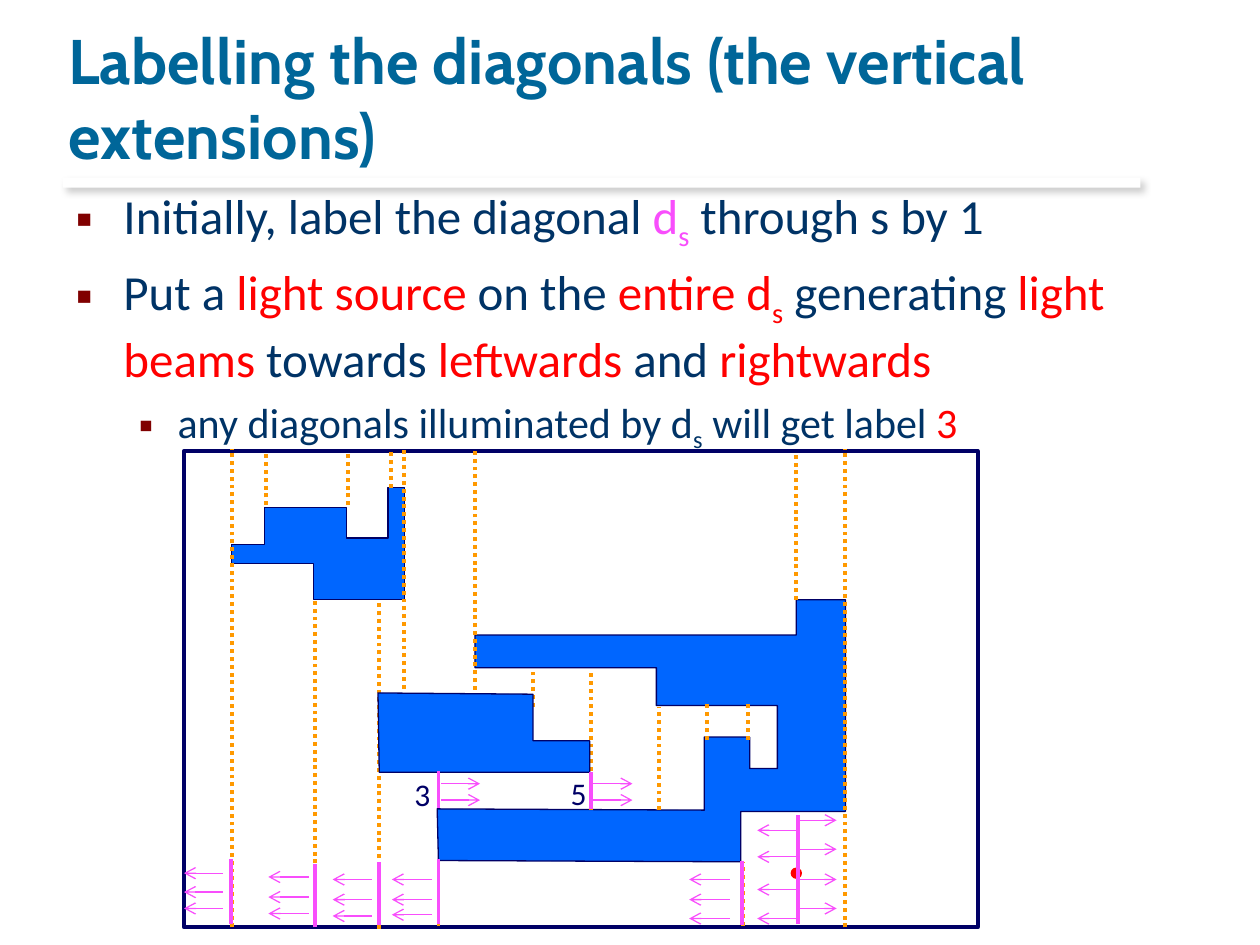
"""Build the slide on labelling the diagonals by light beams."""
import lxml.etree
import pptx
import pptx.dml.color
import pptx.enum.dml
import pptx.enum.shapes
import pptx.enum.text
import pptx.oxml
import pptx.oxml.ns
import pptx.util

Inches, Pt = pptx.util.Inches, pptx.util.Pt
SHAPE = pptx.enum.shapes.MSO_SHAPE
NAVY, BLUE, ORANGE, PINK = "000066", "0066FF", "FF9900", "F84EFC"
RED, INK, TEAL, MAROON = "FF0000", "003366", "006699", "800000"

# Each run is (text, colour, subscript)
BULLETS = [
    (0, 28, [("Initially, label the diagonal ", INK, False), ("d", PINK, False),
             ("s", PINK, True), (" through s by 1", INK, False)]),
    (0, 28, [("Put a ", INK, False), ("light source ", RED, False),
             ("on the ", INK, False), ("entire d", RED, False), ("s", RED, True),
             (" generating ", INK, False), ("light beams", RED, False),
             (" towards ", INK, False), ("leftwards", RED, False),
             (" and ", INK, False), ("rightwards", RED, False)]),
    (1, 24, [("any diagonals illuminated by d", INK, False), ("s", INK, True),
             (" will get label ", INK, False), ("3", RED, False)]),
]
UPPER_LEFT = [(1.84, 4.32), (1.84, 4.47), (2.49, 4.47), (2.49, 4.76), (3.21, 4.76),
              (3.21, 3.87), (3.08, 3.87), (3.08, 4.27), (2.75, 4.27), (2.75, 4.03),
              (2.1, 4.03), (2.1, 4.32)]
RIGHT = [(3.77, 5.04), (3.77, 5.3), (5.21, 5.3), (5.21, 5.6), (6.17, 5.6), (6.17, 6.1),
         (5.95, 6.1), (5.95, 5.85), (5.59, 5.85), (5.59, 6.43), (3.47, 6.42),
         (3.48, 6.83), (5.88, 6.84), (5.88, 6.44), (6.71, 6.44), (6.71, 4.76),
         (6.32, 4.76), (6.32, 5.04)]
MIDDLE = [(3, 5.5), (4.23, 5.51), (4.23, 5.88), (4.68, 5.88), (4.68, 6.13), (3.01, 6.13)]

# Vertical lines are (x, bottom, top)
EXTENSIONS = [(3.77, 5.6, 3.58), (3.21, 5.59, 3.56), (6.71, 7.36, 3.56),
              (1.84, 7.36, 3.56), (3.01, 7.37, 4.76), (2.5, 7.35, 4.74),
              (3.48, 7.35, 6.83), (5.9, 7.35, 6.84), (4.69, 6.43, 5.33),
              (5.23, 6.43, 5.61), (4.23, 5.61, 5.33), (5.61, 5.87, 5.59),
              (5.94, 5.87, 5.59), (6.32, 4.76, 3.58), (2.76, 4.01, 3.6),
              (2.11, 4.01, 3.6), (3.1, 3.87, 3.58)]
LIT_DIAGONALS = [(6.33, 7.33, 6.47), (3.48, 6.41, 6.12), (4.69, 6.42, 6.13),
                 (5.89, 7.34, 6.83), (3.48, 7.33, 6.82), (3.01, 7.34, 6.84),
                 (2.5, 7.36, 6.86), (1.83, 7.33, 6.82)]
# Beams are (start x, end x, heights)
BEAMS = [(6.33, 6.01, (6.59, 6.8, 7.06, 7.29)), (6.34, 6.64, (6.51, 6.74, 6.98, 7.21)),
         (5.79, 5.47, (6.98, 7.14, 7.29)), (3.43, 3.11, (6.98, 7.14, 7.26)),
         (2.95, 2.64, (6.98, 7.14, 7.27)), (2.45, 2.13, (6.96, 7.12, 7.25)),
         (1.77, 1.46, (6.93, 7.08, 7.21)), (3.5, 3.81, (6.22, 6.35)),
         (4.71, 5.02, (6.22, 6.35))]


def rgb(code):
    """Turn a hex string into a colour."""
    return pptx.dml.color.RGBColor.from_string(code)


def add_xml(parent, tag, **attributes):
    """Append a drawing element to its parent."""
    return lxml.etree.SubElement(parent, pptx.oxml.ns.qn(tag), attributes)


def place(shape, left, top, width, height):
    """Move and size a shape."""
    shape.left, shape.top = Inches(left), Inches(top)
    shape.width, shape.height = Inches(width), Inches(height)


def set_font(font, size, color, name="Calibri"):
    """Set size, colour and typeface."""
    font.size, font.name = Pt(size), name
    font.color.rgb = rgb(color)


def paint(shape, fill, line, width=0.75):
    """Give a shape its fill and outline, without shadow."""
    shape.shadow.inherit = False
    if fill:
        shape.fill.solid()
        shape.fill.fore_color.rgb = rgb(fill)
    else:
        shape.fill.background()
    if line:
        shape.line.color.rgb = rgb(line)
        shape.line.width = Pt(width)
    else:
        shape.line.fill.background()


def add_preset(slide, kind, box, fill, line, width=0.75):
    """Add a preset shape in a box of inches."""
    shape = slide.shapes.add_shape(kind, *map(Inches, box))
    paint(shape, fill, line, width)
    return shape


def add_obstacle(slide, corners):
    """Add a filled polygon."""
    points = [(Inches(x), Inches(y)) for x, y in corners]
    builder = slide.shapes.build_freeform(*points[0])
    builder.add_line_segments(points[1:], close=True)
    paint(builder.convert_to_shape(), BLUE, NAVY)


def add_line(slide, start, end, color, width, dotted=False, arrow=False):
    """Add a straight line, dotted or with an arrowhead."""
    line = slide.shapes.add_connector(pptx.enum.shapes.MSO_CONNECTOR.STRAIGHT,
                                      *map(Inches, (*start, *end)))
    line.line.color.rgb = rgb(color)
    line.line.width = Pt(width)
    if dotted:
        line.line.dash_style = pptx.enum.dml.MSO_LINE.ROUND_DOT
    if arrow:
        add_xml(line.line._get_or_add_ln(), "a:tailEnd", type="arrow")
    add_xml(line._element.spPr, "a:effectLst")


def add_label(slide, text, left, top):
    """Add the number of a diagonal."""
    box = slide.shapes.add_textbox(*map(Inches, (left, top, 0.33, 0.4)))
    box.text_frame.word_wrap = False
    paragraph = box.text_frame.paragraphs[0]
    paragraph.text = text
    set_font(paragraph.font, 18, NAVY)


def add_title_rule(slide):
    """Add the pale bar under the title with its soft shadow."""
    rule = add_preset(slide, SHAPE.RECTANGLE, (0.5, 1.41, 8.55, 0.08), "FFFFFF", None)
    effects = rule._element.spPr.find(pptx.oxml.ns.qn("a:effectLst"))
    shadow = add_xml(effects, "a:outerShdw", blurRad=str(Pt(4)), dist=str(Pt(3)),
                     dir="2700000", algn="tl", rotWithShape="0")
    add_xml(add_xml(shadow, "a:srgbClr", val="000000"), "a:alpha", val="20000")


def fill_title(title):
    """Write the title."""
    place(title, 0.44, 0.17, 8.5, 1.25)
    frame = title.text_frame
    frame.text = "Labelling the diagonals (the vertical extensions)"
    frame.auto_size = pptx.enum.text.MSO_AUTO_SIZE.NONE
    frame.vertical_anchor = pptx.enum.text.MSO_ANCHOR.BOTTOM
    paragraph = frame.paragraphs[0]
    paragraph.alignment = pptx.enum.text.PP_ALIGN.LEFT
    set_font(paragraph.font, 36, TEAL, "Cabin")
    paragraph.font.bold = True
    paragraph.runs[0]._r.get_or_add_rPr().set("spc", "10")


def fill_body(body):
    """Write the bulleted list."""
    place(body, 0.5, 1.42, 8.91, 1.21)
    frame = body.text_frame
    frame.auto_size = pptx.enum.text.MSO_AUTO_SIZE.NONE
    for number, (level, size, runs) in enumerate(BULLETS):
        paragraph = frame.add_paragraph() if number else frame.paragraphs[0]
        paragraph.level = level
        margin, indent = ((0.38, -0.38), (0.81, -0.31))[level]
        properties = paragraph._p.get_or_add_pPr()
        properties.set("marL", str(Inches(margin)))
        properties.set("indent", str(Inches(indent)))
        add_xml(add_xml(properties, "a:buClr"), "a:srgbClr", val=MAROON)
        add_xml(properties, "a:buFont", typeface="Arial")
        add_xml(properties, "a:buChar", char="▪")
        paragraph.space_before = Pt(size * 0.2)
        set_font(paragraph.font, size, INK)
        for text, color, subscript in runs:
            run = paragraph.add_run()
            run.text = text
            run.font.color.rgb = rgb(color)
            if subscript:
                run._r.get_or_add_rPr().set("baseline", "-25000")


def draw_scene(slide):
    """Draw the obstacles, the extensions and the light beams."""
    add_preset(slide, SHAPE.RECTANGLE, (1.46, 3.58, 6.3, 3.78), None, NAVY, 2.25)
    add_obstacle(slide, UPPER_LEFT)
    add_obstacle(slide, RIGHT)
    add_preset(slide, SHAPE.OVAL, (6.28, 6.89, 0.08, 0.08), RED, RED)
    for x, bottom, top in EXTENSIONS:
        add_line(slide, (x, bottom), (x, top), ORANGE, 2.25, dotted=True)
    add_obstacle(slide, MIDDLE)
    for x, bottom, top in LIT_DIAGONALS:
        add_line(slide, (x, bottom), (x, top), PINK, 2.25)
    for start, end, heights in BEAMS:
        for y in heights:
            add_line(slide, (start, y), (end, y), PINK, 0.75, arrow=True)
    add_label(slide, "3", 3.19, 6.1)
    add_label(slide, "5", 4.43, 6.09)


def main():
    """Build and save the slide."""
    deck = pptx.Presentation()
    deck.slide_width, deck.slide_height = Inches(10), Inches(7.5)
    slide = deck.slides.add_slide(deck.slide_layouts[1])
    add_title_rule(slide)
    fill_title(slide.shapes.title)
    fill_body(slide.placeholders[1])
    draw_scene(slide)
    deck.save("out.pptx")


if __name__ == "__main__":
    main()
